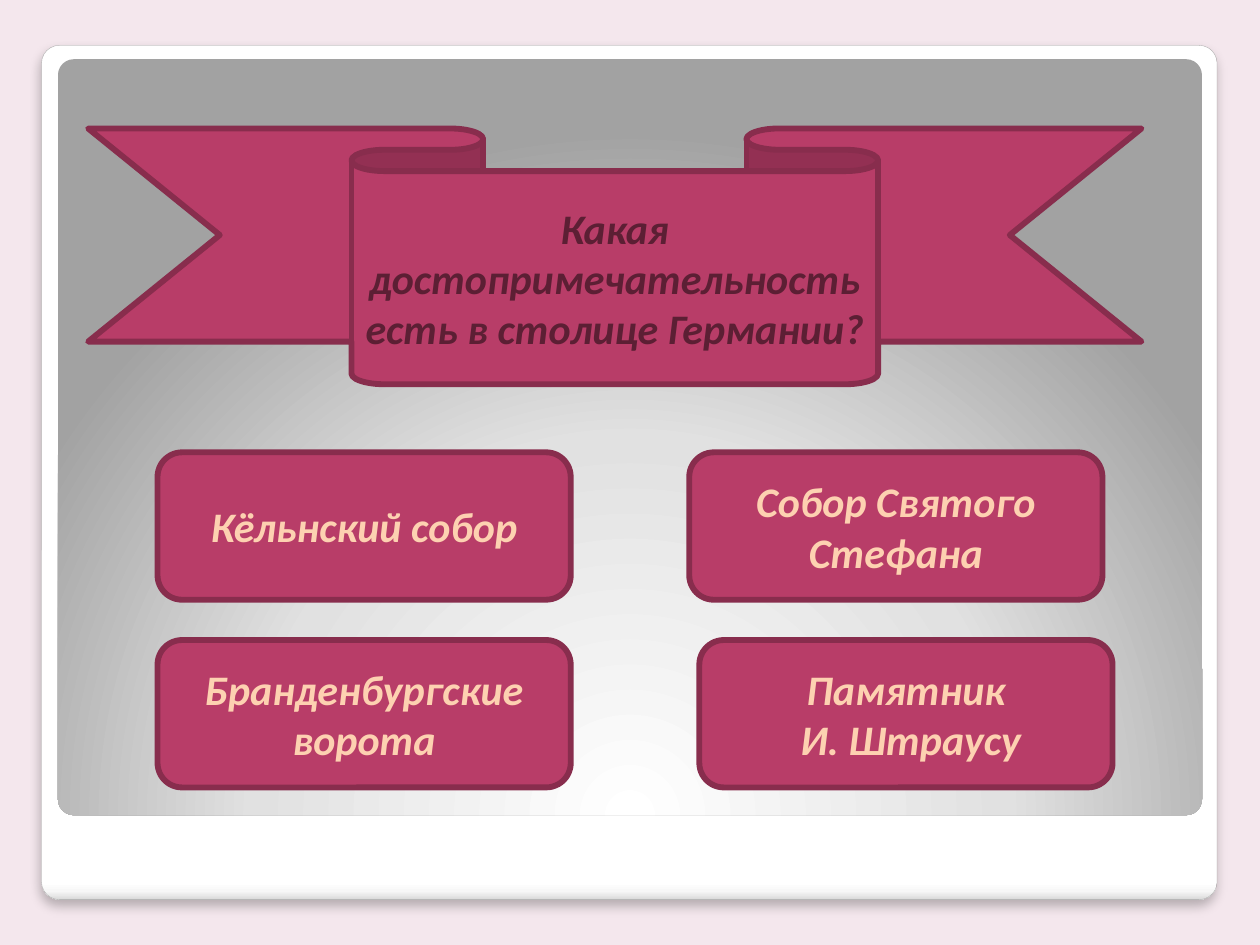
from pptx import Presentation
from pptx.dml.color import RGBColor
from pptx.enum.shapes import MSO_SHAPE
from pptx.enum.text import MSO_ANCHOR, PP_ALIGN
from pptx.oxml import parse_xml
from pptx.oxml.ns import nsdecls, qn
from pptx.util import Inches, Pt

COLORS = {
    "page": "F4E7ED",
    "edge": "A4A4A4",
    "rose": "B83D68",
    "wine": "882D4D",
    "plum": "5C1F34",
    "peach": "FDD1B1",
}


class Quiz:
    font = "Calibri"
    size = Pt(24)
    border = Pt(3.35)

    def __init__(self, slide):
        self.slide = slide

    def color(self, name):
        return RGBColor.from_string(COLORS[name])

    def page(self):
        fill = self.slide.background.fill
        fill.solid()
        fill.fore_color.rgb = self.color("page")

    def shape(self, kind, box):
        shape = self.slide.shapes.add_shape(kind, *map(Inches, box))
        shape.shadow.inherit = False
        return shape

    def panel(self, box, stops, shade):
        panel = self.shape(MSO_SHAPE.ROUNDED_RECTANGLE, box)
        panel.adjustments[0] = 0.021
        panel.line.fill.background()
        panel.fill.background()
        marks = "".join(
            f'<a:gs pos="{pos * 1000}"><a:srgbClr val="{tint}"/></a:gs>'
            for pos, tint in stops
        )
        grad = parse_xml(
            f'<a:gradFill {nsdecls("a")} rotWithShape="1">'
            f"<a:gsLst>{marks}</a:gsLst>{shade}</a:gradFill>"
        )
        props = panel.element.spPr
        props.replace(props.find(qn("a:noFill")), grad)
        return panel

    def shadow(self, shape):
        effects = shape.element.spPr.find(qn("a:effectLst"))
        effects.append(parse_xml(
            f'<a:outerShdw {nsdecls("a")} blurRad="{Pt(6)}" dist="{Pt(4)}" '
            'dir="5400000" algn="t" rotWithShape="0"><a:srgbClr val="000000">'
            '<a:alpha val="25000"/></a:srgbClr></a:outerShdw>'
        ))

    def label(self, kind, box, text, ink):
        shape = self.shape(kind, box)
        shape.fill.solid()
        shape.fill.fore_color.rgb = self.color("rose")
        shape.line.color.rgb = self.color("wine")
        shape.line.width = self.border
        frame = shape.text_frame
        frame.text = text
        frame.word_wrap = True
        frame.vertical_anchor = MSO_ANCHOR.MIDDLE
        for para in frame.paragraphs:
            para.alignment = PP_ALIGN.CENTER
            for run in para.runs:
                run.font.name = self.font
                run.font.size = self.size
                run.font.bold = run.font.italic = True
                run.font.color.rgb = self.color(ink)

    def banner(self, box, text):
        self.label(MSO_SHAPE.DOWN_RIBBON, box, text, "plum")

    def answer(self, left, top, text):
        box = (left, top, 3.28, 1.17)
        self.label(MSO_SHAPE.ROUNDED_RECTANGLE, box, text, "peach")


def main():
    deck = Presentation()
    deck.slide_width, deck.slide_height = Inches(10), Inches(7.5)
    quiz = Quiz(deck.slides.add_slide(deck.slide_layouts[6]))
    quiz.page()

    card = quiz.panel(
        (0.33, 0.36, 9.33, 6.78),
        [(0, "FFFFFF"), (98, "FFFFFF"), (99, "F7F7F7"), (100, "DADADA")],
        '<a:lin ang="5400000" scaled="0"/>',
    )
    card.line.color.rgb = quiz.color("edge")
    card.line.width = Pt(0.16)
    quiz.shadow(card)
    quiz.panel(
        (0.46, 0.47, 9.08, 6),
        [(0, "FFFFFF"), (55, "E1E1E1"), (100, "A2A2A2")],
        '<a:path path="circle"><a:fillToRect l="50000" t="175000" '
        'r="50000" b="-75000"/></a:path>',
    )

    quiz.banner((0.7, 1.02, 8.36, 2.03),
                "Какая достопримечательность есть в столице Германии?")
    rows = [
        (3.59, (1.25, "Кёльнский собор"), (5.47, "Собор Святого Стефана")),
        (5.08, (1.25, "Бранденбургские ворота"),
         (5.55, "Памятник\n И. Штраусу")),
    ]
    for top, *cells in rows:
        for left, text in cells:
            quiz.answer(left, top, text)
    deck.save("out.pptx")


if __name__ == "__main__":
    main()
